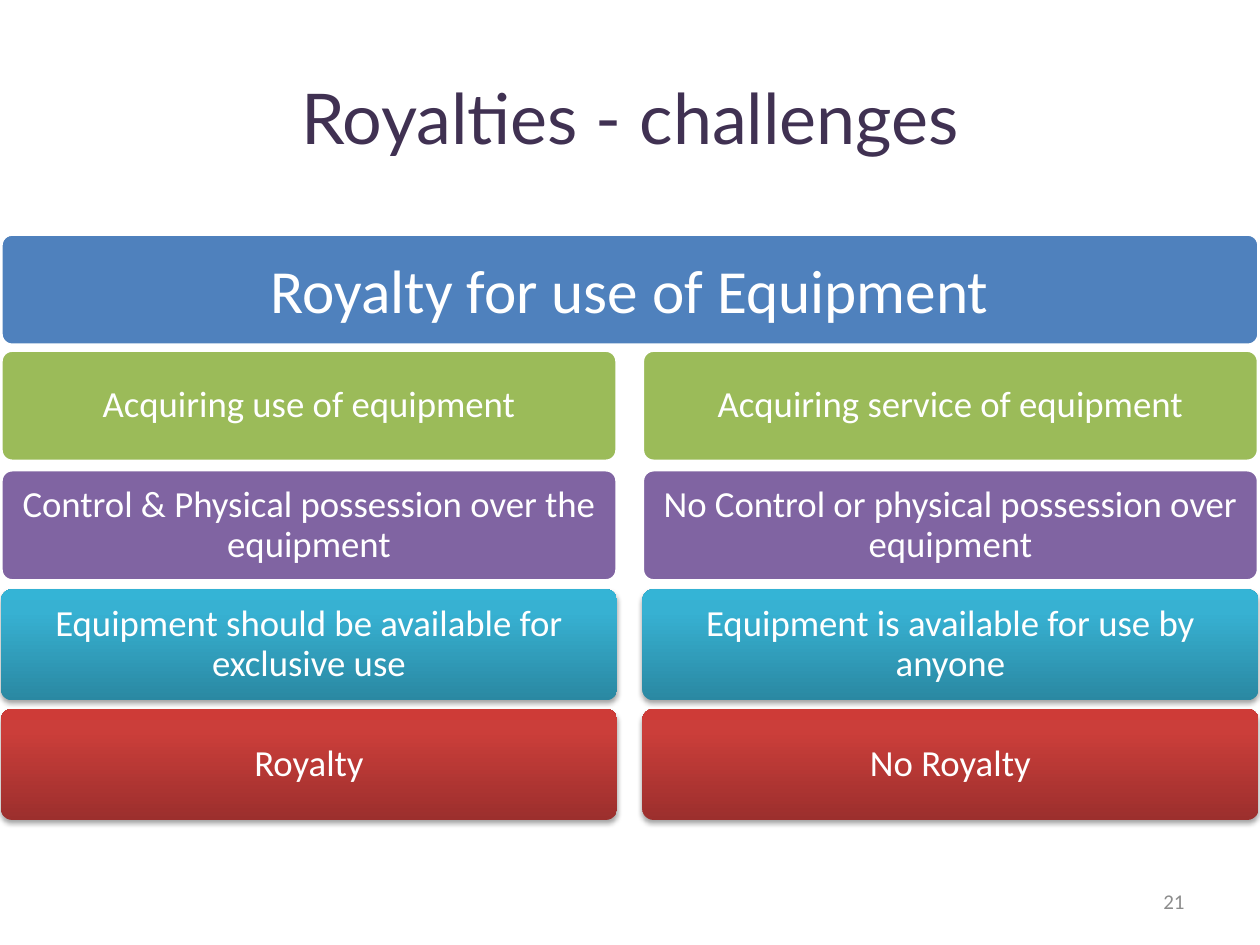
from lxml.etree import SubElement
from pptx import Presentation
from pptx.dml.color import RGBColor
from pptx.enum.shapes import MSO_SHAPE
from pptx.enum.text import MSO_ANCHOR, PP_ALIGN
from pptx.oxml import parse_xml
from pptx.oxml.ns import nsdecls, qn
from pptx.util import Cm, Pt

WHITE = RGBColor(0xFF, 0xFF, 0xFF)
BLUE = RGBColor(0x4F, 0x81, 0xBD)
GREEN = RGBColor(0x9B, 0xBB, 0x59)
PURPLE = RGBColor(0x80, 0x64, 0xA2)
TITLE_COLOR = RGBColor(0x40, 0x31, 0x52)
GREY = RGBColor(0x8C, 0x8C, 0x8C)
# Gradient colours from the bottom edge upwards
TEAL = (RGBColor(0x2A, 0x88, 0xA2), RGBColor(0x37, 0xB1, 0xD2), RGBColor(0x34, 0xB4, 0xD6))
RED = (RGBColor(0x9C, 0x2F, 0x2D), RGBColor(0xCB, 0x3E, 0x3A), RGBColor(0xCE, 0x3B, 0x37))
GRADIENT_STOPS = (0, 80, 100)

BLOCK_HEIGHT = 2.24
COLUMN_WIDTH = 12.42
COLUMN_LEFTS = (0.02, 12.95)
FIRST_ROW_TOP = 7.06
ROW_PITCH = 2.41

ROWS = [
    (GREEN, "Acquiring use of equipment", "Acquiring service of equipment"),
    (PURPLE, "Control & Physical possession over the equipment",
     "No Control or physical possession over equipment"),
    (TEAL, "Equipment should be available for exclusive use",
     "Equipment is available for use by anyone"),
    (RED, "Royalty", "No Royalty"),
]


class SlideBuilder:
    def __init__(self, slide, font="Calibri"):
        self.slide = slide
        self.font = font

    def set_text(self, shape, text, size, color, align=PP_ALIGN.CENTER, font=None):
        frame = shape.text_frame
        frame.word_wrap = True
        frame.vertical_anchor = MSO_ANCHOR.MIDDLE
        paragraph = frame.paragraphs[0]
        paragraph.alignment = align
        run = paragraph.add_run()
        run.text = text
        run.font.name = font or self.font
        run.font.size = Pt(size)
        run.font.color.rgb = color
        return paragraph

    def label(self, left, top, width, height, text, size, color, **style):
        box = self.slide.shapes.add_textbox(Cm(left), Cm(top), Cm(width), Cm(height))
        self.set_text(box, text, size, color, **style)

    def block(self, left, top, width, text, fill, size=21, inset=0.3, text_drop=0):
        """Add a rounded block; a tuple as fill gives a gradient with a shadow."""
        shape = self.slide.shapes.add_shape(
            MSO_SHAPE.ROUNDED_RECTANGLE, Cm(left), Cm(top), Cm(width), Cm(BLOCK_HEIGHT))
        shape.adjustments[0] = 0.1
        shape.shadow.inherit = False
        if isinstance(fill, tuple) and not isinstance(fill, RGBColor):
            shape.line.fill.background()
            self.gradient(shape, fill)
            self.drop_shadow(shape)
        else:
            shape.fill.solid()
            shape.fill.fore_color.rgb = fill
            shape.line.color.rgb = WHITE
            shape.line.width = Pt(2)
        frame = shape.text_frame
        frame.margin_left = frame.margin_right = frame.margin_bottom = Cm(inset)
        frame.margin_top = Cm(inset + text_drop)
        self.set_text(shape, text, size, WHITE).line_spacing = 0.9

    def gradient(self, shape, colors):
        stops = "".join(
            f'<a:gs pos="{position * 1000}"><a:srgbClr val="{color}"/></a:gs>'
            for position, color in zip(GRADIENT_STOPS, colors))
        fill = parse_xml(
            f'<a:gradFill {nsdecls("a")} rotWithShape="1"><a:gsLst>{stops}</a:gsLst>'
            '<a:lin ang="16200000" scaled="0"/></a:gradFill>')
        shape.element.spPr.find(qn("a:prstGeom")).addnext(fill)

    def drop_shadow(self, shape):
        effects = shape.element.spPr.find(qn("a:effectLst"))
        shadow = SubElement(effects, qn("a:outerShdw"), blurRad=str(int(Pt(3.1))),
                            dist=str(int(Pt(1.8))), dir="5400000", rotWithShape="0")
        color = SubElement(shadow, qn("a:srgbClr"), val="000000")
        SubElement(color, qn("a:alpha"), val="35000")


def main():
    presentation = Presentation()
    presentation.slide_width = Cm(25.4)
    presentation.slide_height = Cm(19.05)
    builder = SlideBuilder(presentation.slides.add_slide(presentation.slide_layouts[6]))

    builder.label(1.27, 0.76, 22.86, 3.18, "Royalties - challenges", 40, TITLE_COLOR,
                  font="Lato")
    builder.block(COLUMN_LEFTS[0], 4.72, 25.36, "Royalty for use of Equipment", BLUE,
                  size=35, inset=0.38, text_drop=0.16)
    for row, (fill, *texts) in enumerate(ROWS):
        for left, text in zip(COLUMN_LEFTS, texts):
            builder.block(left, FIRST_ROW_TOP + row * ROW_PITCH, COLUMN_WIDTH, text, fill)
    builder.label(18.21, 17.65, 5.92, 1.02, "21", 12, GREY, align=PP_ALIGN.RIGHT)

    presentation.save("out.pptx")


if __name__ == "__main__":
    main()
